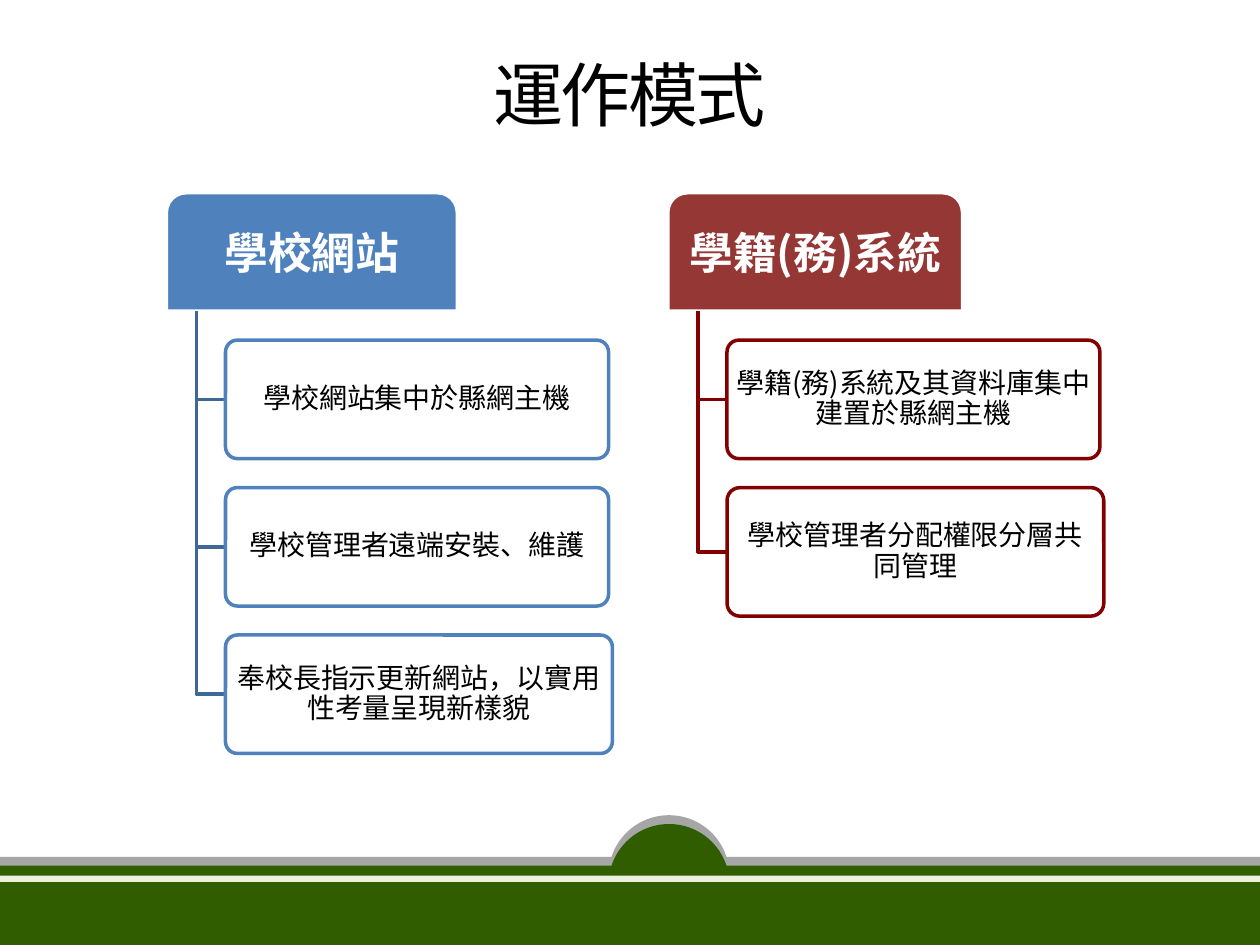
from lxml import etree
from pptx import Presentation
from pptx.dml.color import RGBColor
from pptx.enum.shapes import MSO_SHAPE
from pptx.enum.text import MSO_ANCHOR, MSO_AUTO_SIZE, PP_ALIGN
from pptx.oxml.ns import qn
from pptx.util import Inches, Pt

RECT, OVAL = MSO_SHAPE.RECTANGLE, MSO_SHAPE.OVAL
TAB, CARD = MSO_SHAPE.ROUND_2_SAME_RECTANGLE, MSO_SHAPE.ROUNDED_RECTANGLE
MIDDLE, CENTER = MSO_ANCHOR.MIDDLE, PP_ALIGN.CENTER

TITLE = "運作模式"
BRANCHES = [
    {"head": "學校網站", "left": 1.32, "width": 2.31,
     "fill": "4F81BD", "edge": "4F81BD", "link": "3F6797", "card": "FFFFFF",
     "items": [("學校網站集中於縣網主機", 3.04, 0.94),
               ("學校管理者遠端安裝、維護", 3.04, 0.94),
               ("奉校長指示更新網站，以實用性考量呈現新樣貌", 3.07, 0.94)]},
    {"head": "學籍(務)系統", "left": 5.3, "width": 2.34,
     "fill": "953735", "edge": "820000", "link": "820000", "card": None,
     "items": [("學籍(務)系統及其資料庫集中建置於縣網主機", 2.96, 0.94),
               ("學校管理者分配權限分層共同管理", 2.99, 1.02)]},
]
THEME = {
    "font": "Noto Sans CJK SC", "line": 2,
    "green": "305D00", "gray": "A6A6A6", "stripe": "EBF1DE",
    "title": {"size": Pt(40), "color": "000000"},
    "head": {"size": Pt(25), "bold": True, "color": "FFFFFF"},
    "item": {"size": Pt(16), "color": "000000"},
}
W, H = 10, 7.5
HEAD_TOP, HEAD_H = 1.53, 0.94
STEP = 1.17
STEM, INDENT = 0.23, 0.47
DOME, DOME_X = 0.96, 4.83
FOOTER = [
    (OVAL, DOME_X, 6.47, DOME, DOME, "gray"),
    (RECT, 0, 6.8, W, 0.63, "gray"),
    (RECT, 0, 6.87, W, 0.63, "green"),
    (OVAL, DOME_X, H - DOME, DOME, DOME, "green"),
    (RECT, 0, 6.95, W, 0.05, "stripe"),
]


def rgb(c):
    return RGBColor.from_string(c)


def paint(sp, fill, line=None):
    sp.shadow.inherit = False
    if fill:
        sp.fill.solid()
        sp.fill.fore_color.rgb = rgb(fill)
    else:
        sp.fill.background()
    if line:
        sp.line.color.rgb = rgb(line)
        sp.line.width = Pt(THEME["line"])
    else:
        sp.line.fill.background()


def add_box(slide, kind, x, y, w, h, fill, line=None):
    sp = slide.shapes.add_shape(kind, Inches(x), Inches(y), Inches(w), Inches(h))
    paint(sp, fill, line)
    return sp


def write(p, text, style):
    r = p.add_run()
    r.text = text
    for key, value in style.items():
        if key == "color":
            r.font.color.rgb = rgb(value)
        else:
            setattr(r.font, key, value)
    r.font.name = THEME["font"]
    rpr = r.font._element
    etree.SubElement(rpr, qn("a:ea")).set("typeface", THEME["font"])
    return rpr


def label(sp, text, style, side, edge):
    tf = sp.text_frame
    fmt = {"word_wrap": True, "vertical_anchor": MIDDLE,
           "margin_left": Inches(side), "margin_right": Inches(side),
           "margin_top": Inches(edge), "margin_bottom": Inches(edge)}
    for key, value in fmt.items():
        setattr(tf, key, value)
    p = tf.paragraphs[0]
    p.alignment, p.line_spacing = CENTER, 0.9
    write(p, text, style)


def add_title(slide):
    w, h = 2.36, 0.77
    sp = slide.shapes.add_textbox(Inches((W - w) / 2), Inches(0.36), Inches(w), Inches(h))
    tf = sp.text_frame
    tf.word_wrap = False
    tf.auto_size = MSO_AUTO_SIZE.SHAPE_TO_FIT_TEXT
    write(tf.paragraphs[0], TITLE, THEME["title"]).set("spc", "-150")


def add_elbow(slide, x, y, end_x, end_y, color):
    fb = slide.shapes.build_freeform(Inches(x), Inches(y))
    fb.add_line_segments([(Inches(x), Inches(end_y)), (Inches(end_x), Inches(end_y))], close=False)
    paint(fb.convert_to_shape(), None, color)


def add_branch(slide, b):
    head = add_box(slide, TAB, b["left"], HEAD_TOP, b["width"], HEAD_H, b["fill"], "FFFFFF")
    label(head, b["head"], THEME["head"], 0.05, 0.03)
    x = b["left"] + INDENT
    for i, (text, w, h) in enumerate(b["items"], 1):
        y = HEAD_TOP + i * STEP
        add_elbow(slide, x - STEM, HEAD_TOP + HEAD_H, x, y + h / 2, b["link"])
        sp = add_box(slide, CARD, x, y, w, h, b["card"], b["edge"])
        sp.adjustments[0] = 0.1
        label(sp, text, THEME["item"], 0.03, 0.02)


def main():
    prs = Presentation()
    prs.slide_width, prs.slide_height = Inches(W), Inches(H)
    slide = prs.slides.add_slide(prs.slide_layouts[6])
    for *place, color in FOOTER:
        add_box(slide, *place, THEME[color])
    add_title(slide)
    for b in BRANCHES:
        add_branch(slide, b)
    prs.save("out.pptx")


if __name__ == "__main__":
    main()
